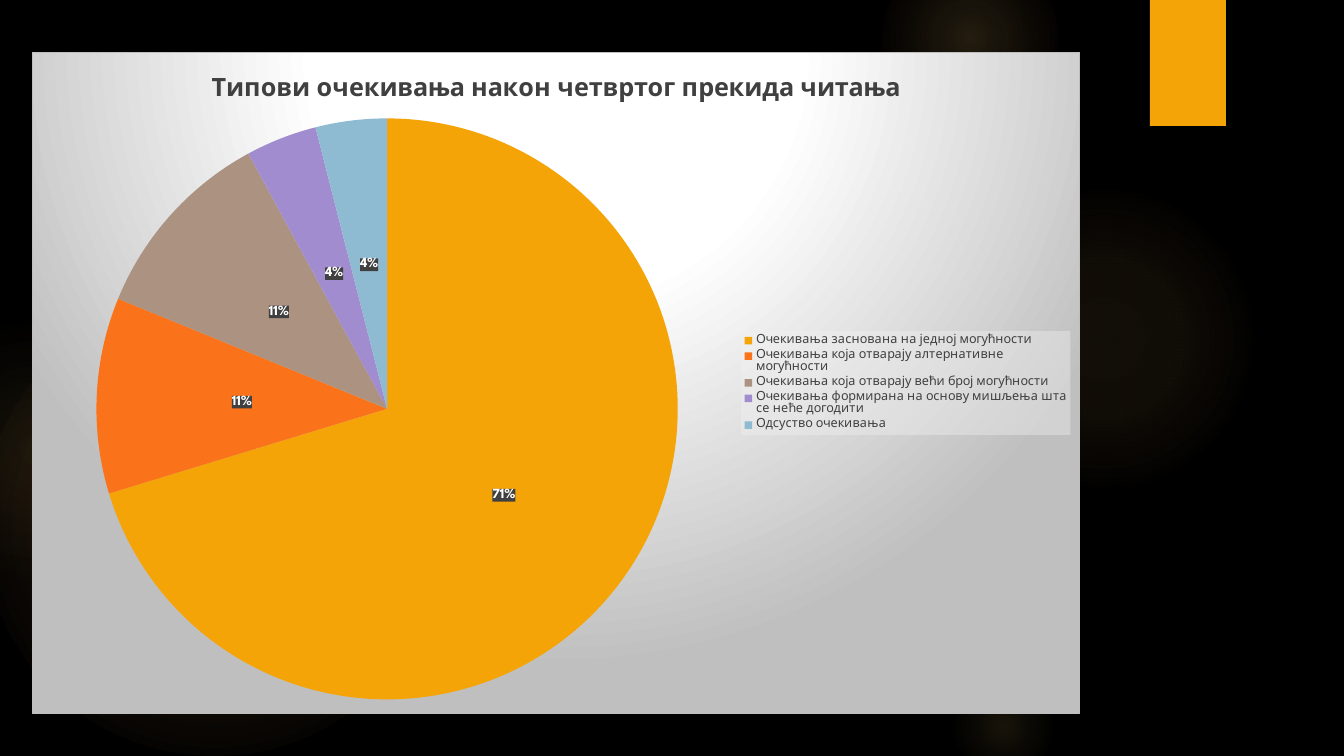
from lxml import etree
from pptx import Presentation
from pptx.chart.data import CategoryChartData
from pptx.dml.color import RGBColor
from pptx.enum.chart import XL_CHART_TYPE, XL_LABEL_POSITION, XL_LEGEND_POSITION
from pptx.enum.shapes import MSO_SHAPE
from pptx.oxml import parse_xml
from pptx.oxml.ns import qn
from pptx.util import Emu, Pt

PIE, CENTER, RIGHT = XL_CHART_TYPE.PIE, XL_LABEL_POSITION.CENTER, XL_LEGEND_POSITION.RIGHT
OVAL, RECTANGLE = MSO_SHAPE.OVAL, MSO_SHAPE.RECTANGLE

SLIDE_WIDTH, SLIDE_HEIGHT = 1344, 756
SCALE = 12192000 / SLIDE_WIDTH
FONT = "League Spartan"

BLACK = RGBColor(0x00, 0x00, 0x00)
WHITE = RGBColor(0xFF, 0xFF, 0xFF)
DARK = RGBColor(0x40, 0x40, 0x40)
PALE = RGBColor(0xF2, 0xF2, 0xF2)
SILVER = RGBColor(0xBF, 0xBF, 0xBF)
AMBER = RGBColor(0xF5, 0xA4, 0x08)
ORANGE = RGBColor(0xFA, 0x73, 0x1A)
TAUPE = RGBColor(0xAB, 0x92, 0x81)
VIOLET = RGBColor(0xA1, 0x8C, 0xD0)
SKY = RGBColor(0x8E, 0xBB, 0xD2)
GLOW = RGBColor(0xFA, 0xC9, 0x6A)
ROSE = RGBColor(0xF5, 0x9B, 0x74)

DRAWING = 'xmlns:a="http://schemas.openxmlformats.org/drawingml/2006/main"'
CHART = 'xmlns:c="http://schemas.openxmlformats.org/drawingml/2006/chart"'

# left, top, diameter, gradient stops (position %, colour, opacity %)
GLOWS = [
    (-17, 294, 462, [(0, GLOW, 11), (36, GLOW, 10), (75, GLOW, 0)]),
    (-93, 320, 260, [(0, GLOW, 8), (36, GLOW, 5), (71, ROSE, 0)]),
    (949, 184, 310, [(0, GLOW, 7), (36, GLOW, 6), (69, GLOW, 0)]),
    (882, -50, 176, [(0, GLOW, 14), (36, GLOW, 7), (73, GLOW, 0)]),
    (949, 672, 109, [(0, GLOW, 10), (31, GLOW, 5), (66, GLOW, 0)]),
]

TITLE = "Типови очекивања након четвртог прекида читања"
EXPECTATIONS = [
    ("Очекивања заснована на једној могућности", 71, AMBER),
    ("Очекивања која отварају алтернативне могућности", 11, ORANGE),
    ("Очекивања која отварају већи број могућности", 11, TAUPE),
    ("Очекивања формирана на основу мишљења шта се неће догодити", 4, VIOLET),
    ("Одсуство очекивања", 4, SKY),
]

CHART_BOX = (32, 52, 1048, 662)
PIE_BOX = (64, 66, 582, 582)  # inside the chart
LEGEND_BOX = (709, 279, 330, 104)  # inside the chart


def color_xml(color, opacity=100):
    return f'<a:srgbClr val="{color}"><a:alpha val="{opacity * 1000}"/></a:srgbClr>'


def gradient_xml(stops, top=50, bottom=50):
    stop_list = "".join(
        f'<a:gs pos="{position * 1000}">{color_xml(color, opacity)}</a:gs>'
        for position, color, opacity in stops)
    return (f'<a:gradFill {DRAWING} rotWithShape="1"><a:gsLst>{stop_list}</a:gsLst>'
            f'<a:path path="circle"><a:fillToRect l="50000" t="{top * 1000}" '
            f'r="50000" b="{bottom * 1000}"/></a:path></a:gradFill>')


def chart_frame(content):
    return parse_xml(f"<c:spPr {CHART} {DRAWING}>{content}</c:spPr>")


def solid_frame(color, opacity):
    return chart_frame(f"<a:solidFill>{color_xml(color, opacity)}</a:solidFill>")


def chart_layout(box, inner=False):
    """Manual layout of a chart part, as fractions of the chart size."""
    layout = etree.Element(qn("c:layout"))
    manual = etree.SubElement(layout, qn("c:manualLayout"))
    settings = [("layoutTarget", "inner")] if inner else []
    settings += [("xMode", "edge"), ("yMode", "edge")]
    settings += [(name, f"{length / CHART_BOX[2 + index % 2]:.4f}")
                 for index, (name, length) in enumerate(zip("xywh", box))]
    for name, value in settings:
        etree.SubElement(manual, qn(f"c:{name}")).set("val", value)
    return layout


def remove_layout(element):
    for layout in element.findall(qn("c:layout")):
        element.remove(layout)


def style_font(font, size, color, bold=False):
    font.name, font.size, font.bold = FONT, Pt(size), bold
    font.color.rgb = color


class SlideBuilder:
    def __init__(self, presentation):
        self.slide = presentation.slides.add_slide(presentation.slide_layouts[6])

    @staticmethod
    def emu(*lengths):
        return [Emu(round(length * SCALE)) for length in lengths]

    def background(self, color):
        fill = self.slide.background.fill
        fill.solid()
        fill.fore_color.rgb = color

    def shape(self, kind, box, color):
        shape = self.slide.shapes.add_shape(kind, *self.emu(*box))
        shape.shadow.inherit = False
        shape.fill.solid()
        shape.fill.fore_color.rgb = color
        shape.line.fill.background()
        return shape

    def glow(self, left, top, diameter, stops):
        shape = self.shape(OVAL, (left, top, diameter, diameter), GLOW)
        solid = shape.element.spPr.find(qn("a:solidFill"))
        solid.getparent().replace(solid, parse_xml(gradient_xml(stops)))

    def pie(self, box, title, slices):
        data = CategoryChartData(number_format='0"%"')
        data.categories = [name for name, _, _ in slices]
        data.add_series("Series 1", [value for _, value, _ in slices])
        chart = self.slide.shapes.add_chart(PIE, *self.emu(*box), data).chart
        style_font(chart.font, 10, WHITE)
        self.chart_title(chart, title)
        self.chart_panel(chart)
        self.chart_legend(chart)

        # Slices
        plot = chart.plots[0]
        plot.vary_by_categories = True
        for index, (_, _, color) in enumerate(slices):
            fill = plot.series[0].points[index].format.fill
            fill.solid()
            fill.fore_color.rgb = color
        self.chart_labels(chart)

    def chart_title(self, chart, text):
        chart.has_title = True
        run = chart.chart_title.text_frame.paragraphs[0].add_run()
        run.text = text
        style_font(run.font, 18, DARK, bold=True)

    def chart_panel(self, chart):
        stops = [(0, WHITE, 100), (39, WHITE, 100), (100, SILVER, 100)]
        border = f'<a:ln w="9525"><a:solidFill>{color_xml(SILVER)}</a:solidFill></a:ln>'
        body = chart.element.find(qn("c:chart"))
        body.addnext(chart_frame(gradient_xml(stops, -80, 180) + border))
        plot_area = body.find(qn("c:plotArea"))
        remove_layout(plot_area)
        plot_area.insert(0, chart_layout(PIE_BOX, inner=True))

    def chart_legend(self, chart):
        chart.has_legend = True
        legend = chart.legend
        legend.position = RIGHT
        legend.include_in_layout = False
        style_font(legend.font, 9, DARK)
        element = chart.element.find(".//" + qn("c:legend"))
        remove_layout(element)
        element.find(qn("c:legendPos")).addnext(chart_layout(LEGEND_BOX))
        element.find(qn("c:txPr")).addprevious(solid_frame(PALE, 39))

    def chart_labels(self, chart):
        labels = chart.plots[0].series[0].data_labels
        labels.show_value = True
        labels.number_format, labels.number_format_is_linked = '0"%"', False
        labels.position = CENTER
        style_font(labels.font, 10, WHITE, bold=True)
        series = chart.element.find(".//" + qn("c:ser"))
        text_style = series.find(f"{qn('c:dLbls')}/{qn('c:txPr')}")
        text_style.addprevious(solid_frame(DARK, 90))


def main():
    presentation = Presentation()
    presentation.slide_width, presentation.slide_height = SlideBuilder.emu(
        SLIDE_WIDTH, SLIDE_HEIGHT)
    builder = SlideBuilder(presentation)

    # Backdrop
    builder.background(BLACK)
    for glow in GLOWS:
        builder.glow(*glow)
    builder.shape(RECTANGLE, (1150, 0, 76, 126), AMBER)

    # Chart
    builder.pie(CHART_BOX, TITLE, EXPECTATIONS)
    presentation.save("out.pptx")


if __name__ == "__main__":
    main()
